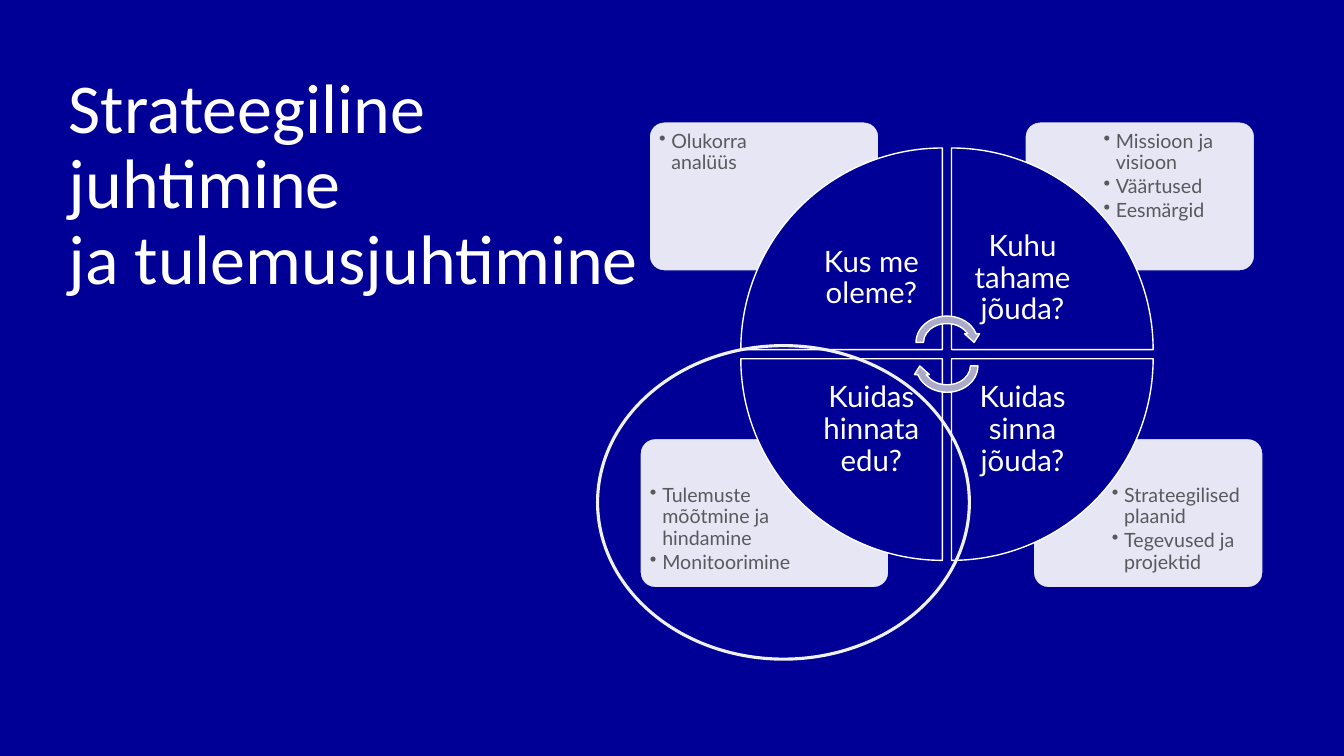
from dataclasses import dataclass

from lxml.etree import SubElement
from pptx import Presentation
from pptx.dml.color import RGBColor
from pptx.enum.shapes import MSO_SHAPE
from pptx.enum.text import MSO_ANCHOR, MSO_AUTO_SIZE, PP_ALIGN
from pptx.oxml.ns import qn
from pptx.util import Cm, Pt


@dataclass(frozen=True)
class Theme:
    navy: str = "000096"
    white: str = "FFFFFF"
    grey: str = "575A5D"
    arrow: str = "ABABC9"
    ring: str = "F0F1F2"
    title_font: str = "Calibri"
    body_font: str = "Lato"
    title_size: float = 50
    question_size: float = 21
    bullet_size: float = 14


THEME = Theme()

CARD_HEIGHT = 3.76
CARD_TEXT_SHARE = 0.67
CARD_TEXT_HEIGHT = 2.64
CARD_TEXT_GAP = 0.09

WHEEL_LEFT, WHEEL_TOP = 18.67, 3.73
WEDGE_SIZE = 5.08
WEDGE_STEP = 5.31
LABEL_SIZE = 3.58

# Left, top, width, bullet points
CARDS = [
    (26.04, 11.05, 5.79, ["Strateegilised plaanid", "Tegevused ja projektid"]),
    (16.13, 11.05, 6.27, ["Tulemuste mõõtmine ja hindamine", "Monitoorimine"]),
    (25.83, 3.07, 5.79, ["Missioon ja visioon", "Väärtused", "Eesmärgid"]),
    (16.36, 3.07, 5.79, ["Olukorra analüüs"]),
]

# Column, row, question; clockwise from the top left
QUADRANTS = [
    (0, 0, "Kus me oleme?"),
    (1, 0, "Kuhu tahame jõuda?"),
    (1, 1, "Kuidas sinna jõuda?"),
    (0, 1, "Kuidas hinnata edu?"),
]


def add_bullet(paragraph):
    properties = paragraph._p.get_or_add_pPr()
    properties.set("marL", str(Cm(0.31)))
    properties.set("indent", str(Cm(-0.31)))
    SubElement(properties, qn("a:buChar")).set("char", "•")


def write_text(shape, lines, *, size, color, font=THEME.body_font, inset=0,
               align=PP_ALIGN.LEFT, anchor=MSO_ANCHOR.TOP, bullets=False):
    """Fill the shape with one formatted paragraph per line."""
    frame = shape.text_frame
    frame.word_wrap = True
    frame.auto_size = MSO_AUTO_SIZE.NONE
    frame.vertical_anchor = anchor
    frame.margin_left = frame.margin_right = Cm(inset)
    frame.margin_top = frame.margin_bottom = Cm(inset)
    for index, line in enumerate(lines):
        paragraph = frame.add_paragraph() if index else frame.paragraphs[0]
        paragraph.text = line
        paragraph.alignment = align
        paragraph.line_spacing = 0.9
        if bullets:
            paragraph.space_after = Pt(2)
            add_bullet(paragraph)
        for run in paragraph.runs:
            run.font.name = font
            run.font.size = Pt(size)
            run.font.color.rgb = RGBColor.from_string(color)


def add_text(slide, left, top, width, height, lines, **text_format):
    box = slide.shapes.add_textbox(Cm(left), Cm(top), Cm(width), Cm(height))
    write_text(box, lines, **text_format)


def add_figure(slide, kind, left, top, width, height, *, fill=None,
               line=THEME.white, line_width=1, rotation=0):
    """Add a preset shape, hollow when no fill is given."""
    shape = slide.shapes.add_shape(kind, Cm(left), Cm(top), Cm(width), Cm(height))
    shape.shadow.inherit = False
    shape.rotation = rotation
    if fill:
        shape.fill.solid()
        shape.fill.fore_color.rgb = RGBColor.from_string(fill)
    else:
        shape.fill.background()
    shape.line.color.rgb = RGBColor.from_string(line)
    shape.line.width = Pt(line_width)
    return shape


def set_opacity(shape, percent):
    color = shape.element.spPr.find(qn("a:solidFill")).find(qn("a:srgbClr"))
    SubElement(color, qn("a:alpha")).set("val", str(percent * 1000))


def add_card(slide, left, top, width, points):
    """Add a card whose text sits in the corner away from the wheel."""
    card = add_figure(slide, MSO_SHAPE.ROUNDED_RECTANGLE, left, top, width,
                      CARD_HEIGHT, fill=THEME.white, line=THEME.navy)
    card.adjustments[0] = 0.1
    set_opacity(card, 90)
    text_width = width * CARD_TEXT_SHARE
    on_right = left > WHEEL_LEFT + WEDGE_STEP
    on_bottom = top > WHEEL_TOP + WEDGE_STEP
    text_left = left + (width - text_width - CARD_TEXT_GAP if on_right else CARD_TEXT_GAP)
    text_top = top + (CARD_HEIGHT - CARD_TEXT_HEIGHT - CARD_TEXT_GAP
                      if on_bottom else CARD_TEXT_GAP)
    add_text(slide, text_left, text_top, text_width, CARD_TEXT_HEIGHT, points,
             size=THEME.bullet_size, color=THEME.grey, inset=0.16, bullets=True)


def add_quadrant(slide, column, row, question, rotation):
    left = WHEEL_LEFT + column * WEDGE_STEP
    top = WHEEL_TOP + row * WEDGE_STEP
    add_figure(slide, MSO_SHAPE.PIE_WEDGE, left, top, WEDGE_SIZE, WEDGE_SIZE,
               fill=THEME.navy, rotation=rotation)
    inward = WEDGE_SIZE - LABEL_SIZE
    add_text(slide, left + (1 - column) * inward, top + (1 - row) * inward,
             LABEL_SIZE, LABEL_SIZE, [question], size=THEME.question_size,
             color=THEME.white, inset=0.41, align=PP_ALIGN.CENTER,
             anchor=MSO_ANCHOR.MIDDLE)


def add_title(slide, text):
    title = slide.shapes.title
    title.left, title.top = Cm(1.73), Cm(1.83)
    title.width, title.height = Cm(15.47), Cm(7.7)
    write_text(title, [text], size=THEME.title_size, color=THEME.white,
               font=THEME.title_font)


def main():
    presentation = Presentation()
    presentation.slide_width, presentation.slide_height = Cm(33.87), Cm(19.05)
    slide = presentation.slides.add_slide(presentation.slide_layouts[5])
    slide.background.fill.solid()
    slide.background.fill.fore_color.rgb = RGBColor.from_string(THEME.navy)

    add_title(slide, "Strateegiline juhtimine\vja tulemusjuhtimine")
    for card in CARDS:
        add_card(slide, *card)
    for turn, quadrant in enumerate(QUADRANTS):
        add_quadrant(slide, *quadrant, rotation=turn * 90)
    for top, rotation in ((7.87, 0), (8.46, 180)):
        add_figure(slide, MSO_SHAPE.CIRCULAR_ARROW, 22.99, top, 1.75, 1.52,
                   fill=THEME.arrow, rotation=rotation)
    add_figure(slide, MSO_SHAPE.OVAL, 15.06, 8.71, 9.37, 7.9,
               line=THEME.ring, line_width=2.25)

    presentation.save("out.pptx")


if __name__ == "__main__":
    main()
